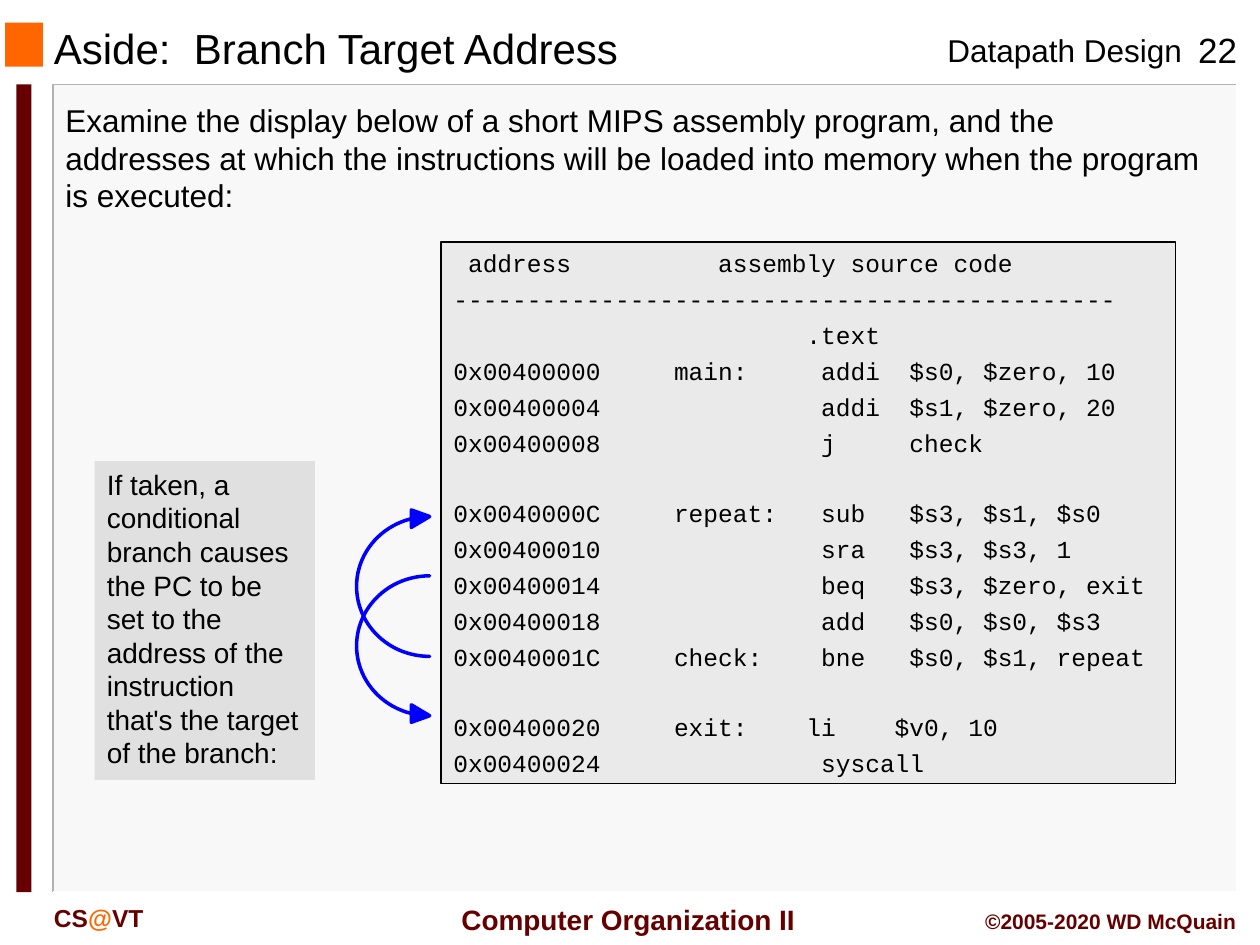
from dataclasses import dataclass

from pptx import Presentation
from pptx.dml.color import RGBColor as RGB
from pptx.enum.shapes import MSO_SHAPE as Shape
from pptx.enum.text import MSO_ANCHOR as Anchor, PP_ALIGN as Align
from pptx.util import Inches, Pt


@dataclass(frozen=True)
class Theme:
    sans: str = "Arial"
    mono: str = "Courier New"
    black: str = "000000"
    white: str = "FFFFFF"
    maroon: str = "660000"
    orange: str = "FF6600"
    blue: str = "0000FF"
    panel: str = "F8F8F8"
    edge: str = "B2B2B2"
    code: str = "EAEAEA"
    note: str = "E0E0E0"
    title: int = 24
    number: int = 20
    body: int = 18
    aside: int = 16
    small: int = 14
    tiny: int = 12


T = Theme()
RULE = "-" * 45
# address, label, operation, operands; None marks a gap
CODE = [
    ("0x00400000", "main:", "addi", "$s0, $zero, 10"),
    ("0x00400004", "", "addi", "$s1, $zero, 20"),
    ("0x00400008", "", "j", "check"),
    None,
    ("0x0040000C", "repeat:", "sub", "$s3, $s1, $s0"),
    ("0x00400010", "", "sra", "$s3, $s3, 1"),
    ("0x00400014", "", "beq", "$s3, $zero, exit"),
    ("0x00400018", "", "add", "$s0, $s0, $s3"),
    ("0x0040001C", "check:", "bne", "$s0, $s1, repeat"),
    None,
    ("0x00400020", "exit:", "li", "$v0, 10"),
    ("0x00400024", "", "syscall", ""),
]


def color(name):
    return RGB.from_string(name)


def place(box):
    return [Inches(n) for n in box]


def block(slide, box, fill, line=None, width=0.75, kind=Shape.RECTANGLE):
    shape = slide.shapes.add_shape(kind, *place(box))
    shape.shadow.inherit = False
    shape.fill.solid()
    shape.fill.fore_color.rgb = color(fill)
    if line:
        shape.line.color.rgb = color(line)
        shape.line.width = Pt(width)
    else:
        shape.line.fill.background()
    return shape


def style(par, size, ink=T.black, face=T.sans, bold=False, align=Align.LEFT):
    par.alignment = align
    font = par.font
    font.name, font.size, font.bold = face, Pt(size), bold
    font.color.rgb = color(ink)


def write(shape, text, size, anchor=Anchor.TOP, wrap=True, **look):
    frame = shape.text_frame
    frame.word_wrap = wrap
    frame.vertical_anchor = anchor
    par = frame.paragraphs[0]
    par.text = text
    style(par, size, **look)
    return par


def label(slide, box, text, size, **look):
    return write(slide.shapes.add_textbox(*place(box)), text, size, **look)


def bevel(slide, points, ink):
    start, *rest = [(Inches(x), Inches(y)) for x, y in points]
    build = slide.shapes.build_freeform(*start, scale=1.0)
    build.add_line_segments(rest, close=False)
    edge = build.convert_to_shape()
    edge.shadow.inherit = False
    edge.fill.background()
    edge.line.color.rgb = color(ink)
    edge.line.width = Pt(1)


def panel(slide, box):
    left, top, wide, high = box
    right, base = left + wide, top + high
    block(slide, box, T.panel)
    bevel(slide, [(right, top), (left, top), (left, base)], T.edge)
    bevel(slide, [(right, top), (right, base), (left, base)], T.white)
    block(slide, (0.13, top, 0.12, high), T.maroon)


def header(slide, box):
    left, top, wide, high = box
    block(slide, (left, top, 0.3, 0.35), T.orange)
    label(slide, (left + 0.29, top, 6.33, 0.4), "Aside:  Branch Target Address",
          T.title, anchor=Anchor.MIDDLE)
    label(slide, (left + 7.38, top + 0.02, 2.08, high), "Datapath Design",
          T.body, wrap=False)
    label(slide, (left + wide - 0.67, top, 0.67, high), "22", T.number,
          align=Align.CENTER)


def footer(slide, box):
    left, top, wide, high = box
    par = label(slide, (left, top, 1.5, high), "", T.small,
                ink=T.maroon, bold=True)
    for text, ink in (("CS", T.maroon), ("@", T.orange), ("VT", T.maroon)):
        run = par.add_run()
        run.text = text
        run.font.color.rgb = color(ink)
    label(slide, (left + 3.15, top, 2.95, high), " Computer Organization II",
          T.aside, anchor=Anchor.MIDDLE, wrap=False, ink=T.maroon, bold=True,
          align=Align.CENTER)
    label(slide, (left + wide - 2.58, top + 0.04, 2.58, 0.3),
          "©2005-2020 WD McQuain", T.tiny, ink=T.maroon, bold=True,
          align=Align.RIGHT)


def listing(slide, box):
    """Code box with fixed-width columns; gaps are paragraph spacing."""
    frame = block(slide, box, T.code, T.black).text_frame
    frame.word_wrap = True
    frame.vertical_anchor = Anchor.TOP
    lines = [f"{'address':>8}{'assembly source code':>30}", RULE,
             f"{'.text':>29}"]
    for row in CODE:
        if row:
            addr, tag, op, args = row
            pad = 9 if tag == "exit:" else 10
            lines.append(f"{addr:<15}{tag:<{pad}}{op:<6}{args}".rstrip())
        else:
            lines.append(None)
    step, gap = 3.7, 0
    for n, text in enumerate(lines):
        if text is None:
            gap = 19.6
            continue
        par = frame.add_paragraph() if n else frame.paragraphs[0]
        par.text = text
        style(par, T.small, face=T.mono)
        par.space_before = Pt(step + gap)
        gap = 0


def jump(slide, box, up=False):
    arrow = block(slide, box, T.blue, T.blue, 2, Shape.CURVED_RIGHT_ARROW)
    for n, value in enumerate((0, 0.239, 0.25)):
        arrow.adjustments[n] = value
    if up:
        arrow._element.spPr.xfrm.set("flipV", "1")


def main():
    deck = Presentation()
    deck.slide_width, deck.slide_height = Inches(10), Inches(7.5)
    slide = deck.slides.add_slide(deck.slide_layouts[6])
    panel(slide, (0.42, 0.67, 9.4, 6.41))
    header(slide, (0.04, 0.18, 9.96, 0.43))
    footer(slide, (0.33, 7.12, 9.58, 0.35))
    label(slide, (0.42, 0.75, 9.25, 0.71),
          "Examine the display below of a short MIPS assembly program, and "
          "the addresses at which the instructions will be loaded into memory "
          "when the program is executed:", T.body)
    listing(slide, (3.5, 1.92, 5.83, 4.3))
    jump(slide, (2.83, 4.03, 0.58, 1.18), up=True)
    jump(slide, (2.83, 4.57, 0.58, 1.18))
    note = block(slide, (0.75, 3.66, 1.75, 2.53), T.note)
    write(note, "If taken, a conditional branch causes the PC to be set to the "
          "address of the instruction that's the target of the branch:", T.aside)
    deck.save("out.pptx")


if __name__ == "__main__":
    main()
